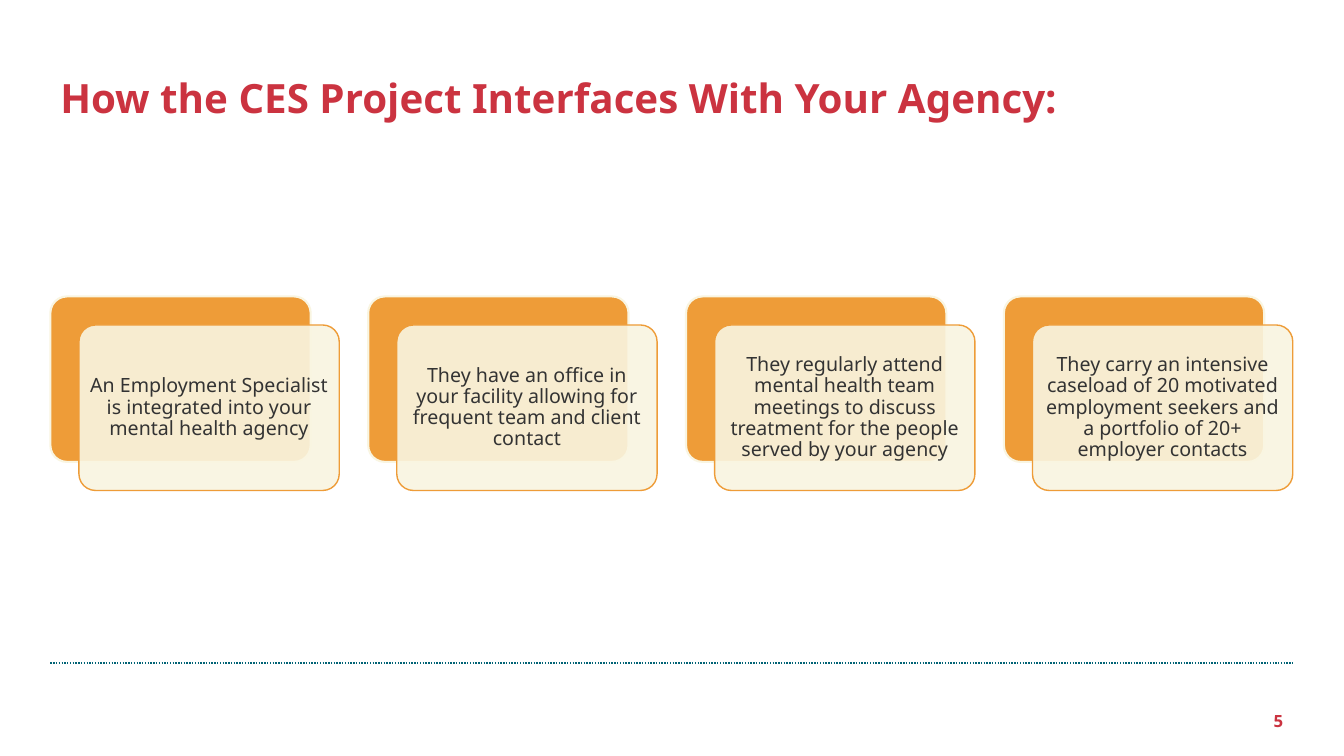
from lxml import etree
from pptx import Presentation
from pptx.dml.color import RGBColor
from pptx.enum import dml, shapes, text
from pptx.oxml import ns
from pptx.util import Cm, Pt

RED = RGBColor(0xCB, 0x33, 0x40)
TEAL = RGBColor(0x00, 0x63, 0x75)
ORANGE = RGBColor(0xEE, 0x9C, 0x38)
CREAM = RGBColor(0xF9, 0xF5, 0xE1)
GREY = RGBColor(0x33, 0x33, 0x33)
FONT = "Noto Sans"
LEFT, TOP, PITCH = 1.27, 7.47, 8.01
CARD_W, CARD_H = 6.56, 4.17
SHIFT = 0.72
CARDS = [
    "An Employment Specialist is integrated into your mental health agency",
    "They have an office in your facility allowing for frequent team and "
    "client contact",
    "They regularly attend mental health team meetings to discuss treatment "
    "for the people served by your agency",
    "They carry an intensive caseload of 20 motivated employment seekers and "
    "a portfolio of 20+ employer contacts",
]


def write(sp, words, size, color, align, bold=False, spacing=1.0):
    """Put one middle-anchored paragraph into a shape."""
    tf = sp.text_frame
    tf.word_wrap = True
    tf.vertical_anchor = text.MSO_ANCHOR.MIDDLE
    p = tf.paragraphs[0]
    p.alignment = align
    p.line_spacing = spacing
    r = p.add_run()
    r.text = words
    r.font.name = FONT
    r.font.size = Pt(size)
    r.font.bold = bold
    r.font.color.rgb = color


def add_label(s, x, y, w, h, *args, **kwargs):
    """Add a text box with one styled paragraph."""
    sp = s.shapes.add_textbox(Cm(x), Cm(y), Cm(w), Cm(h))
    write(sp, *args, **kwargs)


def add_panel(s, x, y, fill, line, width):
    """Add a rounded panel of the card size."""
    sp = s.shapes.add_shape(shapes.MSO_SHAPE.ROUNDED_RECTANGLE,
                            Cm(x), Cm(y), Cm(CARD_W), Cm(CARD_H))
    sp.adjustments[0] = 0.1
    sp.shadow.inherit = False
    sp.fill.solid()
    sp.fill.fore_color.rgb = fill
    sp.line.color.rgb = line
    sp.line.width = Pt(width)
    return sp


def set_alpha(sp, percent):
    """Make the solid fill of a shape partly transparent."""
    color = sp._element.spPr.find(ns.qn("a:solidFill"))[0]
    etree.SubElement(color, ns.qn("a:alpha"), val=str(percent * 1000))


def add_card(s, x, words):
    """Add an orange panel with a translucent text panel over it."""
    add_panel(s, x, TOP, ORANGE, CREAM, 1.5)
    sp = add_panel(s, x + SHIFT, TOP + SHIFT, CREAM, ORANGE, 1)
    set_alpha(sp, 90)
    tf = sp.text_frame
    tf.margin_left = tf.margin_right = Cm(0.15)
    tf.margin_top = tf.margin_bottom = Cm(0.15)
    write(sp, words, 14, GREY, text.PP_ALIGN.CENTER, spacing=0.9)


def add_rule(s, x1, x2, y):
    """Add a dotted horizontal line."""
    line = s.shapes.add_connector(shapes.MSO_CONNECTOR.STRAIGHT,
                                  Cm(x1), Cm(y), Cm(x2), Cm(y))
    line.line.color.rgb = TEAL
    line.line.width = Pt(1)
    line.line.dash_style = dml.MSO_LINE.ROUND_DOT
    etree.SubElement(line._element.spPr, ns.qn("a:effectLst"))


def main():
    """Build and save the slide."""
    prs = Presentation()
    prs.slide_width, prs.slide_height = Cm(33.87), Cm(19.05)
    s = prs.slides.add_slide(prs.slide_layouts[6])
    add_rule(s, LEFT, 32.6, 16.71)
    add_label(s, LEFT, 1.38, 31.32, 2.29,
              "How the CES Project Interfaces With Your Agency:",
              28.8, RED, text.PP_ALIGN.LEFT, bold=True, spacing=0.9)
    add_label(s, 31.32, 17.65, 1.27, 1.02, "5", 12, RED,
              text.PP_ALIGN.RIGHT, bold=True)
    for i, words in enumerate(CARDS):
        add_card(s, LEFT + i * PITCH, words)
    prs.save("out.pptx")


if __name__ == "__main__":
    main()
